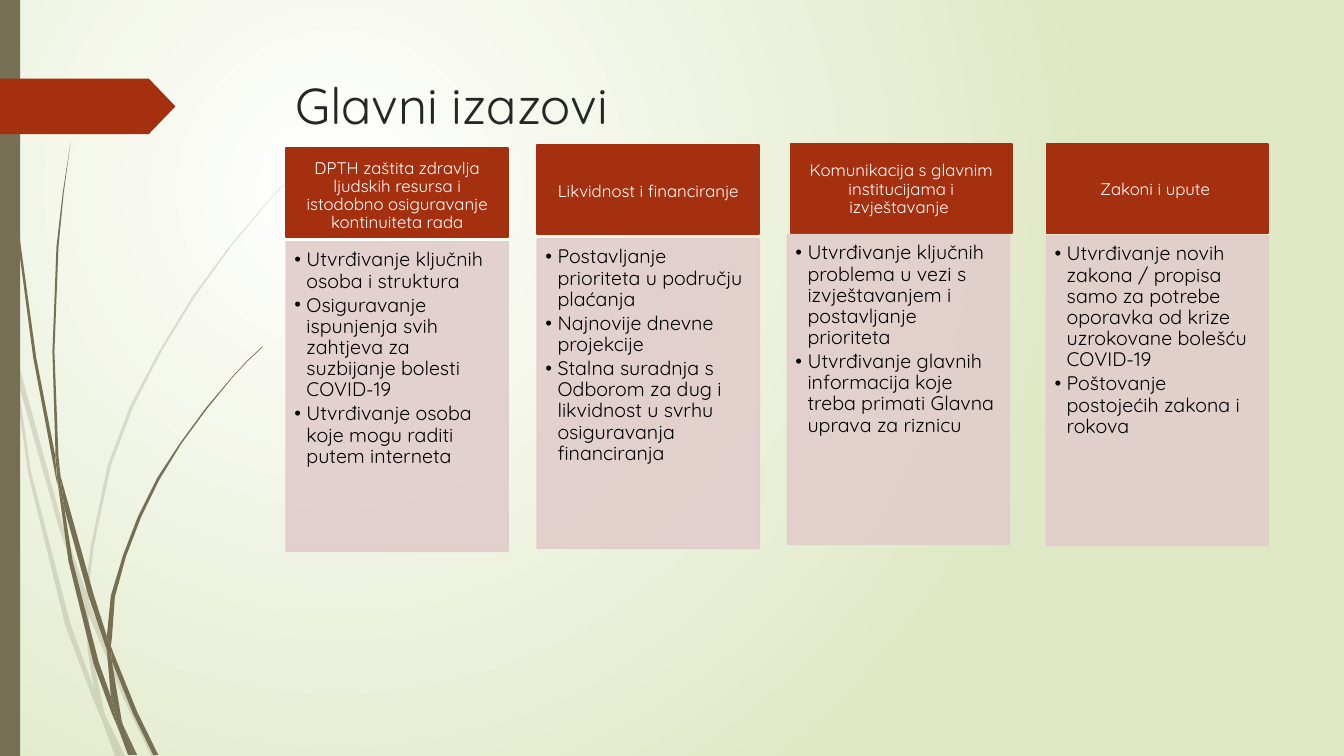
from lxml.etree import SubElement as Sub
from pptx import Presentation
from pptx.dml.color import RGBColor as RGB
from pptx.enum.shapes import MSO_SHAPE as SHAPE
from pptx.enum.text import MSO_ANCHOR as ANCHOR, PP_ALIGN as ALIGN
from pptx.oxml.ns import qn
from pptx.util import Pt

PX = 9144  # a hundredth of an inch
FONT = "Quicksand"
RUST = RGB(0xA5, 0x30, 0x10)
PINK = RGB(0xE1, 0xCD, 0xCC)
OLIVE = RGB(0x76, 0x6F, 0x54)
LIME = RGB(0xDF, 0xE8, 0xC4)
DARK = RGB(0x26, 0x26, 0x26)
WHITE = RGB(0xFF, 0xFF, 0xFF)
BLACK = RGB(0, 0, 0)


def paint(shape, color, alpha=100, edge=False):
    """Fill the shape, optionally see-through and with a line of its own colour."""
    shape.shadow.inherit = False
    fills = [shape.fill]
    if edge:
        shape.line.width = Pt(1.25)
        fills.append(shape.line.fill)
    else:
        shape.line.fill.background()
    for fill in fills:
        fill.solid()
        fill.fore_color.rgb = color
    if alpha < 100:
        for tone in shape.element.spPr.iter(qn("a:srgbClr")):
            Sub(tone, qn("a:alpha"), val=str(alpha * 1000))


deck = Presentation()
deck.slide_width, deck.slide_height = 1333 * PX, 750 * PX
slide = deck.slides.add_slide(deck.slide_layouts[6])
shapes = slide.shapes

# Background: round glow, centred a quarter of the way in
back = slide.background.fill
back.gradient()
for stop, color in zip(back.gradient_stops, (WHITE, LIME)):
    stop.color.rgb = color
line = next(slide.element.iter(qn("a:lin")))
glow = Sub(line.getparent(), qn("a:path"), path="circle")
Sub(glow, qn("a:fillToRect"), l="50000", t="50000", r="100000", b="100000")
line.getparent().remove(line)

# Blades of grass, as outlines: pale ones behind, dark ones in front
PALE = [
    [(11, 350), (9, 322), (0, 282), (0, 299), (10, 344)],
    [(58, 522), (84, 599), (85, 586), (62, 520), (14, 345), (17, 376)],
    [(92, 607), (88, 596), (88, 610), (123, 694), (150, 750), (155, 750), (127, 692)],
    [(119, 750), (124, 750), (105, 711)],
    [(93, 683), (70, 619), (31, 469), (17, 376), (11, 350), (28, 470), (65, 621),
     (92, 693), (101, 714), (99, 707)],
    [(84, 599), (87, 646), (93, 683), (96, 692), (105, 711), (103, 706), (91, 646),
     (88, 610), (88, 608)],
    [(88, 584), (93, 542), (110, 462), (132, 404), (160, 349), (193, 295), (229, 245),
     (268, 198), (290, 175), (312, 154), (312, 153), (289, 175), (268, 197),
     (228, 244), (191, 294), (158, 348), (129, 403), (107, 461), (90, 542), (85, 584),
     (85, 586), (88, 596)],
    [(101, 714), (114, 750), (119, 750)],
    [(88, 608), (88, 610), (88, 596), (85, 586), (84, 599)],
    [(96, 692), (93, 683), (99, 707), (101, 714), (119, 750), (105, 711)],
]
DEEP = [
    [(7, 110), (17, 233), (33, 355), (56, 477), (57, 481), (55, 457), (55, 453),
     (36, 355), (19, 232), (8, 109), (5, 48), (4, 0), (3, 0), (4, 48)],
    [(88, 592), (106, 645), (106, 631), (93, 590), (60, 472), (64, 505)],
    [(113, 649), (110, 641), (111, 656), (132, 708), (152, 749), (157, 749),
     (136, 706)],
    [(110, 691), (98, 657), (72, 556), (64, 505), (57, 477), (68, 557), (93, 659),
     (111, 708), (117, 722), (116, 717)],
    [(60, 472), (58, 453), (54, 349), (58, 245), (63, 193), (70, 141), (62, 193),
     (56, 245), (52, 349), (55, 449)],
    [(133, 749), (136, 749), (122, 719)],
    [(57, 477), (64, 505), (60, 472), (55, 449), (55, 453)],
    [(111, 633), (114, 592), (125, 552), (140, 513), (158, 476), (180, 440), (205, 406),
     (231, 374), (245, 359), (261, 344), (260, 344), (245, 358), (231, 373),
     (204, 405), (179, 439), (156, 474), (137, 512), (122, 551), (110, 591),
     (106, 631), (110, 641)],
    [(117, 722), (127, 749), (131, 749)],
    [(106, 645), (110, 691), (116, 706), (122, 719), (121, 716), (111, 656), (109, 651)],
    [(106, 645), (109, 651), (111, 656), (110, 641), (106, 631)],
    [(116, 706), (110, 691), (116, 717), (117, 722), (130, 749), (133, 749), (122, 719)],
]
for alpha, blades in ((20, PALE), (100, DEEP)):
    for blade in blades:
        pen = shapes.build_freeform(*blade[0], scale=PX)
        pen.add_line_segments(blade[1:])
        paint(pen.convert_to_shape(), OLIVE, alpha)

bar = shapes.add_shape(SHAPE.RECTANGLE, 0, 0, 20 * PX, 750 * PX)
paint(bar, OLIVE)
arrow = shapes.add_shape(SHAPE.PENTAGON, 0, 78 * PX, 174 * PX, 55 * PX)
arrow.adjustments[0] = 0.48
paint(arrow, RUST)

title = shapes.add_textbox(283 * PX, 69 * PX, 975 * PX, 140 * PX).text_frame
title.word_wrap = True
title.text = "Glavni izazovi"
font = title.paragraphs[0].font
font.name, font.size, font.color.rgb = FONT, Pt(36), DARK

# Columns: header left and top, list left and top, header inset, header text, items
COLUMNS = [
    (284, 147, 284, 240, 12,
     "DPTH zaštita zdravlja ljudskih resursa i istodobno osiguravanje kontinuiteta rada",
     ["Utvrđivanje ključnih osoba i struktura",
      "Osiguravanje ispunjenja svih zahtjeva za suzbijanje bolesti COVID-19",
      "Utvrđivanje osoba koje mogu raditi putem interneta"]),
    (533, 144, 533, 237, 9, "Likvidnost i financiranje",
     ["Postavljanje prioriteta u području plaćanja",
      "Najnovije dnevne projekcije",
      "Stalna suradnja s Odborom za dug i likvidnost u svrhu osiguravanja financiranja"]),
    (784, 143, 781, 233, 7, "Komunikacija s glavnim institucijama i izvještavanje ",
     ["Utvrđivanje ključnih problema u vezi s izvještavanjem i postavljanje prioriteta",
      "Utvrđivanje glavnih informacija koje treba primati Glavna uprava za riznicu"]),
    (1038, 143, 1038, 234, 7, "Zakoni i upute ",
     ["Utvrđivanje novih zakona / propisa samo za potrebe oporavka od krize "
      "uzrokovane bolešću COVID-19",
      "Poštovanje postojećih zakona i rokova"]),
]
for head_x, head_y, list_x, list_y, inset, head, items in COLUMNS:
    top = shapes.add_shape(SHAPE.RECTANGLE, head_x * PX, head_y * PX, 220 * PX, 88 * PX)
    paint(top, RUST, edge=True)
    frame = top.text_frame
    frame.word_wrap = True
    frame.vertical_anchor = ANCHOR.MIDDLE
    frame.margin_left = frame.margin_right = 9 * PX
    frame.margin_top, frame.margin_bottom = inset * PX, 5 * PX
    frame.text = head
    para = frame.paragraphs[0]
    para.alignment, para.line_spacing = ALIGN.CENTER, 0.9
    para.font.name, para.font.size, para.font.color.rgb = FONT, Pt(12), WHITE

    body = shapes.add_shape(SHAPE.RECTANGLE, list_x * PX, list_y * PX, 220 * PX, 307 * PX)
    paint(body, PINK, 90, edge=True)
    frame = body.text_frame
    frame.word_wrap = True
    frame.vertical_anchor = ANCHOR.TOP
    frame.margin_left = frame.margin_top = 8 * PX
    frame.margin_right, frame.margin_bottom = 11 * PX, 12 * PX
    frame.text = "\n".join(items)
    for para in frame.paragraphs:
        para.level = 1
        para.alignment, para.line_spacing, para.space_after = ALIGN.LEFT, 0.9, Pt(2)
        props = para._p.get_or_add_pPr()
        props.set("marL", str(12 * PX))
        props.set("indent", str(-12 * PX))
        Sub(props, qn("a:buFont"), typeface=FONT)
        Sub(props, qn("a:buChar"), char="•")
        para.font.name, para.font.size, para.font.color.rgb = FONT, Pt(14), BLACK

deck.save("out.pptx")
